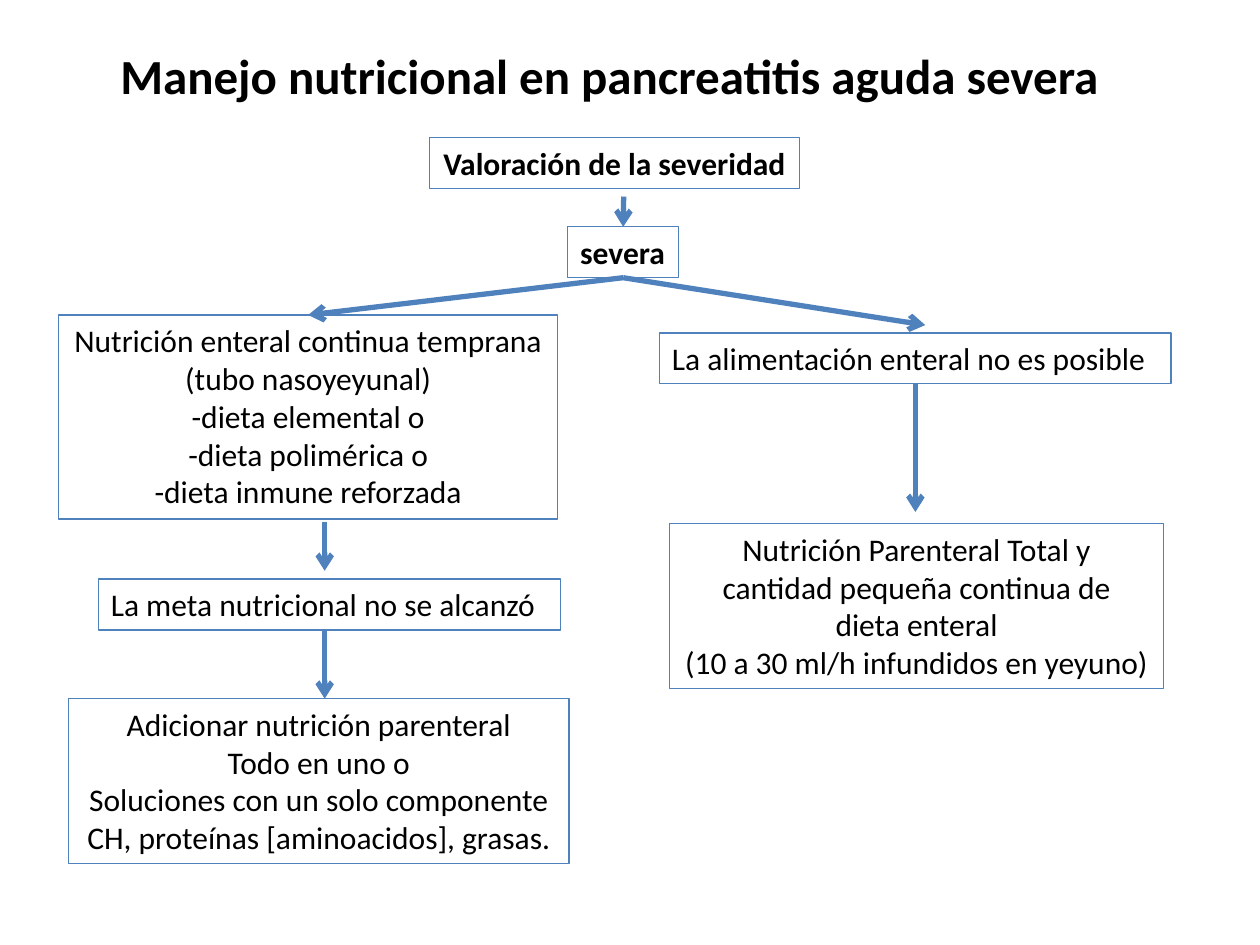
from dataclasses import dataclass
from typing import Optional

from lxml.etree import SubElement
from pptx import Presentation
from pptx.dml.color import RGBColor
from pptx.enum.shapes import MSO_CONNECTOR as Conn, MSO_SHAPE as Shape
from pptx.enum.text import MSO_ANCHOR as Anchor, MSO_AUTO_SIZE as Auto, PP_ALIGN as Align
from pptx.oxml.ns import qn
from pptx.util import Inches, Pt

COLORS = {"text": "000000", "line": "4F81BD"}
FONT = "Calibri"
COLS, ROWS = 100, 75
TOP, BOTTOM = 0, 2


@dataclass
class Box:
    key: str
    col: float
    row: float
    cols: float
    rows: float
    lines: list[str]
    bold: bool = False
    centered: bool = True
    wrap: bool = False


@dataclass
class Arrow:
    start: tuple[float, float]
    end: tuple[float, float]
    source: Optional[str] = None
    target: Optional[str] = None


TITLE = Box("title", 8.55, 3.1, 80.6, 5.7,
            ["Manejo nutricional en pancreatitis aguda severa"], bold=True, centered=False)

BOXES = [
    Box("assessment", 34.08, 10.93, 29.4, 4.04, ["Valoración de la severidad"], bold=True),
    Box("severe", 45.06, 18, 8.8, 4.04, ["severa"], bold=True, centered=False),
    Box("enteral", 4.66, 25, 39.6, 16.2, [
        "Nutrición enteral continua temprana",
        "(tubo nasoyeyunal)",
        "-dieta elemental o",
        "-dieta polimérica o",
        "-dieta inmune reforzada",
    ]),
    Box("not possible", 52.35, 26.43, 40.6, 4.04,
        ["La alimentación enteral no es posible"], centered=False, wrap=True),
    Box("goal missed", 7.82, 45.96, 36.7, 4.04,
        ["La meta nutricional no se alcanzó"], centered=False, wrap=True),
    Box("add parenteral", 5.46, 55.45, 39.7, 13.1, [
        "Adicionar nutrición parenteral",
        "Todo en uno o",
        "Soluciones con un solo componente",
        "CH, proteínas [aminoacidos], grasas.",
    ]),
    Box("total parenteral", 53.14, 41.56, 39.2, 13.1, [
        "Nutrición Parenteral Total y",
        "cantidad pequeña continua de",
        "dieta enteral",
        "(10 a 30 ml/h infundidos en yeyuno)",
    ]),
]

ARROWS = [
    Arrow((49.5, 15.6), (49.5, 18), target="severe"),
    Arrow((49.5, 22), (24.5, 25), source="severe", target="enteral"),
    Arrow((25.77, 41.4), (25.77, 45.3)),
    Arrow((25.77, 50), (25.77, 55.45)),
    Arrow((49.5, 22), (73.43, 25.8), source="severe"),
    Arrow((72.65, 30.47), (72.65, 40.63), source="not possible"),
]

prs = Presentation()
prs.slide_width, prs.slide_height = Inches(10), Inches(7.5)


def x(cols: float) -> int:
    return round(prs.slide_width * cols / COLS)


def y(rows: float) -> int:
    return round(prs.slide_height * rows / ROWS)


def color(name: str) -> RGBColor:
    return RGBColor.from_string(COLORS[name])


def write(sp, box: Box, size: int) -> None:
    tf = sp.text_frame
    tf.text = "\n".join(box.lines)
    tf.word_wrap = box.wrap
    tf.auto_size = Auto.SHAPE_TO_FIT_TEXT
    tf.vertical_anchor = Anchor.TOP
    for p in tf.paragraphs:
        p.alignment = Align.CENTER if box.centered else Align.LEFT
        p.font.name = FONT
        p.font.size = Pt(size)
        p.font.bold = box.bold
        p.font.color.rgb = color("text")


def add_box(slide, box: Box):
    sp = slide.shapes.add_shape(Shape.RECTANGLE, x(box.col), y(box.row), x(box.cols), y(box.rows))
    sp.shadow.inherit = False
    sp.fill.background()
    sp.line.color.rgb = color("line")
    sp.line.width = Pt(0.75)
    write(sp, box, 18)
    return sp


def add_arrow(slide, arrow: Arrow, boxes: dict) -> None:
    cx = slide.shapes.add_connector(Conn.STRAIGHT, x(arrow.start[0]), y(arrow.start[1]),
                                    x(arrow.end[0]), y(arrow.end[1]))
    if arrow.source:
        cx.begin_connect(boxes[arrow.source], BOTTOM)
    if arrow.target:
        cx.end_connect(boxes[arrow.target], TOP)
    cx.line.color.rgb = color("line")
    cx.line.width = Pt(3)
    SubElement(cx.line._get_or_add_ln(), qn("a:tailEnd"), type="arrow")
    SubElement(cx._element.spPr, qn("a:effectLst"))


def main() -> None:
    slide = prs.slides.add_slide(prs.slide_layouts[5])
    title = slide.shapes.title
    title.left, title.top = x(TITLE.col), y(TITLE.row)
    title.width, title.height = x(TITLE.cols), y(TITLE.rows)
    write(title, TITLE, 28)
    boxes = {box.key: add_box(slide, box) for box in BOXES}
    for arrow in ARROWS:
        add_arrow(slide, arrow, boxes)
    prs.save("out.pptx")


if __name__ == "__main__":
    main()
